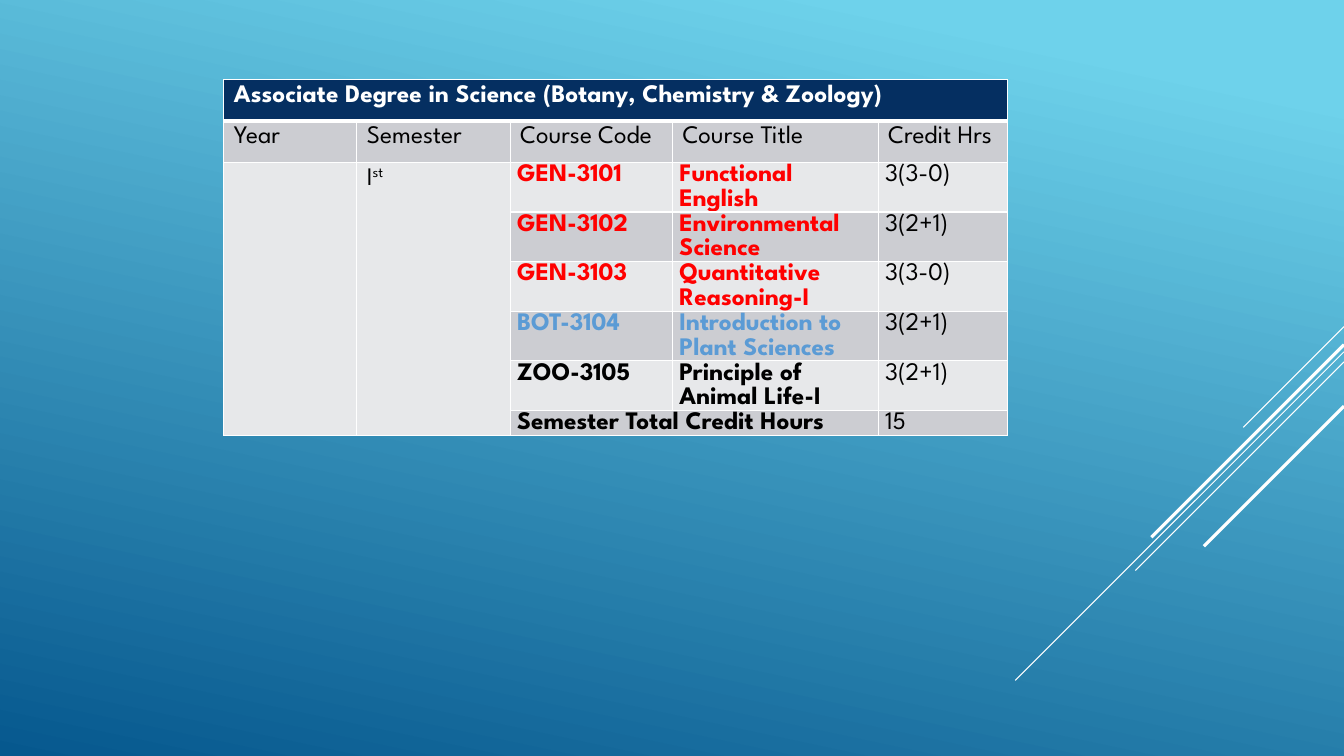
"""Build a slide with the course table of an associate degree."""
from dataclasses import dataclass

from lxml import etree
from pptx import Presentation
from pptx import util as u
from pptx.dml.color import RGBColor
from pptx.enum import shapes
from pptx.oxml.ns import qn


@dataclass(frozen=True)
class Theme:
    """Colours, font and sizes of the slide."""
    font: str = "League Spartan"
    size: int = 18
    sky: str = "6ED2EB"
    deep: str = "06588E"
    white: str = "FFFFFF"
    black: str = "000000"
    navy: str = "052F61"
    light: str = "E7E8EA"
    grey: str = "CCCDD2"
    red: str = "FF0000"
    blue: str = "5B9BD5"


class SlideBuilder:
    """Draw styled elements on the current slide."""

    def __init__(self, theme, slide):
        self.theme = theme
        self.slide = slide

    def background(self, angle):
        """Fill the background with the two-colour gradient."""
        fill = self.slide.background.fill
        fill.gradient()
        fill.gradient_angle = angle
        stops = ((0.1, self.theme.sky), (1, self.theme.deep))
        for stop, (position, color) in zip(fill.gradient_stops, stops):
            stop.position = position
            stop.color.rgb = RGBColor.from_string(color)

    def diagonal(self, right, top, drop, width):
        """Draw a line falling to the left at 45 degrees."""
        line = self.slide.shapes.add_connector(
            shapes.MSO_CONNECTOR.STRAIGHT, u.Inches(right), u.Inches(top),
            u.Inches(right - drop), u.Inches(top + drop))
        line.line.color.rgb = RGBColor.from_string(self.theme.white)
        line.line.width = u.Pt(width)
        etree.SubElement(line._element.spPr, qn("a:effectLst"))

    def table(self, left, top, widths, heights):
        """Add a table with the given column widths and row heights."""
        frame = self.slide.shapes.add_table(
            len(heights), len(widths), u.Inches(left), u.Inches(top),
            u.Inches(sum(widths)), u.Inches(sum(heights)))
        for column, width in zip(frame.table.columns, widths):
            column.width = u.Inches(width)
        for row, height in zip(frame.table.rows, heights):
            row.height = u.Inches(height)
        return frame.table

    def borders(self, cell, top=1, bottom=1):
        """Give a cell white borders with widths in points."""
        properties = cell._tc.get_or_add_tcPr()
        sides = (("lnL", 1), ("lnR", 1), ("lnT", top), ("lnB", bottom))
        for index, (side, width) in enumerate(sides):
            border = etree.Element(qn(f"a:{side}"), w=str(u.Pt(width)))
            fill = etree.SubElement(border, qn("a:solidFill"))
            etree.SubElement(fill, qn("a:srgbClr"), val=self.theme.white)
            properties.insert(index, border)

    def fill(self, cell, color):
        """Fill a cell with one colour."""
        cell.fill.solid()
        cell.fill.fore_color.rgb = RGBColor.from_string(color)

    def label(self, cell, content, color, bold=False, tight=False, superscript=""):
        """Put styled text into a cell."""
        paragraph = cell.text_frame.paragraphs[0]
        paragraph.add_run().text = content
        if superscript:
            run = paragraph.add_run()
            run.text = superscript
            run._r.get_or_add_rPr().set("baseline", "30000")
        font = paragraph.font
        font.name, font.size, font.bold = self.theme.font, u.Pt(self.theme.size), bold
        font.color.rgb = RGBColor.from_string(color)
        if tight:
            paragraph.line_spacing = 1.07
            cell.margin_left = cell.margin_right = u.Inches(0.07)
            cell.margin_top = cell.margin_bottom = 0


def main():
    """Build and save the presentation."""
    theme = Theme()
    presentation = Presentation()
    presentation.slide_width = u.Inches(13.33)
    presentation.slide_height = u.Inches(7.5)
    slide = presentation.slides.add_slide(presentation.slide_layouts[6])
    builder = SlideBuilder(theme, slide)
    builder.background(258)

    diagonals = ((3.24, 1, 0.75), (3.49, 3.26, 0.75), (3.59, 2.07, 0.75),
                 (3.42, 1.91, 2.25), (4.03, 1.39, 2.25))
    for top, drop, width in diagonals:
        builder.diagonal(13.33, top, drop, width)

    headings = ("Year", "Semester", "Course Code", "Course Title", "Credit Hrs")
    courses = (
        ("GEN-3101", "Functional English", "3(3-0)", theme.red),
        ("GEN-3102", "Environmental Science", "3(2+1)", theme.red),
        ("GEN-3103", "Quantitative Reasoning-I", "3(3-0)", theme.red),
        ("BOT-3104", "Introduction to Plant Sciences", "3(2+1)", theme.blue),
        ("ZOO-3105", "Principle of Animal Life-I", "3(2+1)", theme.black),
    )
    heights = [0.41] * 2 + [0.49] * len(courses) + [0.25]
    table = builder.table(2.22, 0.79, (1.32, 1.52, 1.61, 2.04, 1.28), heights)
    last = len(heights) - 1

    for row in range(len(heights)):
        for column in range(len(headings)):
            cell = table.cell(row, column)
            banded = row % 2 and (row == 1 or column > 1)
            builder.fill(cell, theme.navy if row == 0 else theme.grey if banded else theme.light)
            builder.borders(cell, top=3 if row == 1 else 1, bottom=3 if row == 0 else 1)

    table.cell(0, 0).merge(table.cell(0, 4))
    for column in range(2):
        table.cell(2, column).merge(table.cell(last, column))
    table.cell(last, 2).merge(table.cell(last, 3))

    builder.label(table.cell(0, 0), "Associate Degree in Science (Botany, Chemistry & Zoology)",
                  theme.white, bold=True)
    for column, heading in enumerate(headings):
        builder.label(table.cell(1, column), heading, theme.black)
    builder.label(table.cell(2, 1), "I", theme.black, superscript="st")
    for row, (code, title, hours, color) in enumerate(courses, 2):
        builder.label(table.cell(row, 2), code, color, bold=True, tight=True)
        builder.label(table.cell(row, 3), title, color, bold=True, tight=True)
        builder.label(table.cell(row, 4), hours, theme.black, tight=True)
    builder.label(table.cell(last, 2), "Semester Total Credit Hours", theme.black,
                  bold=True, tight=True)
    builder.label(table.cell(last, 4), "15", theme.black, tight=True)

    presentation.save("out.pptx")


if __name__ == "__main__":
    main()
